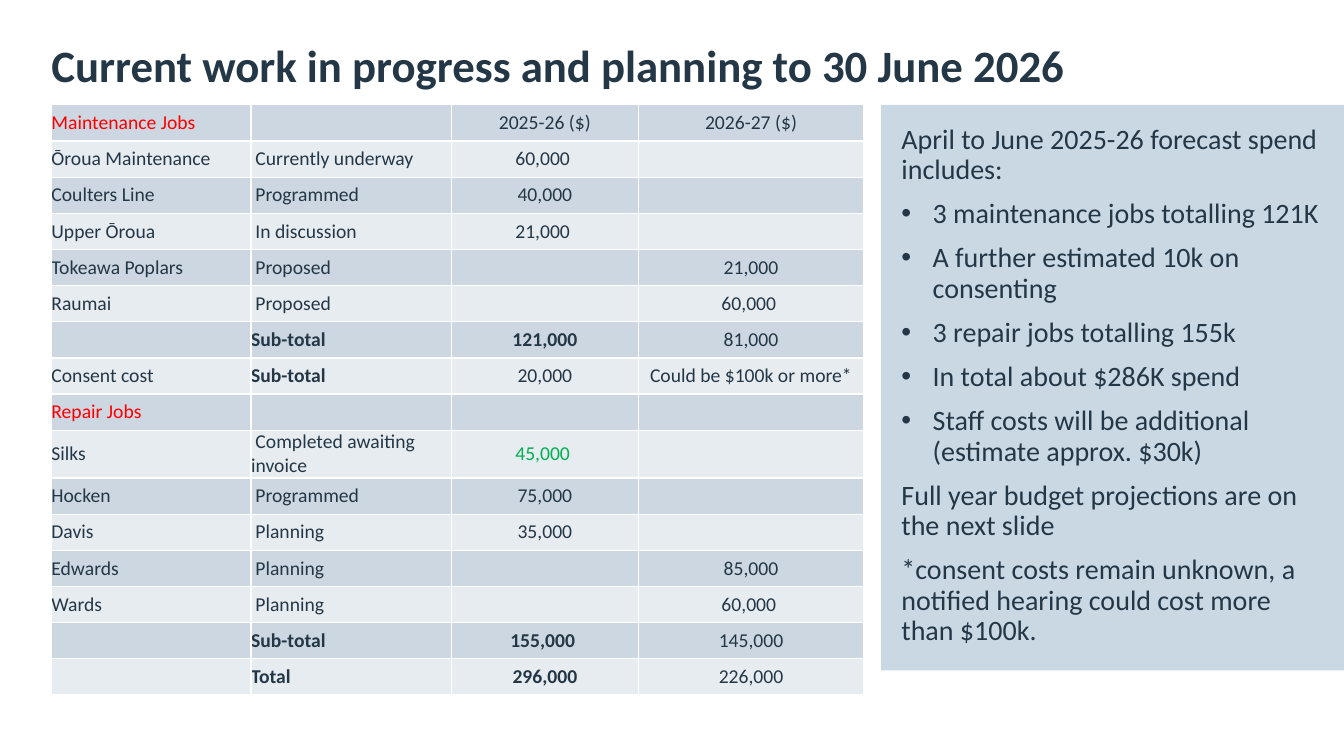
from dataclasses import dataclass

from lxml.etree import SubElement
from pptx import Presentation
from pptx.dml.color import RGBColor
from pptx.enum.shapes import MSO_SHAPE
from pptx.enum.text import MSO_ANCHOR, PP_ALIGN
from pptx.oxml import parse_xml
from pptx.oxml.ns import nsdecls, qn
from pptx.util import Inches, Pt


@dataclass(frozen=True)
class Theme:
    font: str = "Calibri"
    ink: str = "243746"
    heading: str = "FF0000"
    complete: str = "00B050"
    bands: tuple = ("CCD7E1", "E7ECF0")
    border: str = "FFFFFF"
    panel: str = "CAD8E4"
    title_size: int = 32
    panel_size: int = 20
    table_size: int = 14


THEME = Theme()

TITLE = "Current work in progress and planning to 30 June 2026"

# Job, status, 2025-26 spend, 2026-27 spend
JOBS = [
    ("Maintenance Jobs", "", "2025-26 ($)", "2026-27 ($)"),
    ("Ōroua Maintenance", " Currently underway", "60,000 ", ""),
    ("Coulters Line", " Programmed", " 40,000 ", ""),
    ("Upper Ōroua", " In discussion", "21,000 ", ""),
    ("Tokeawa Poplars", " Proposed", "", " 21,000 "),
    ("Raumai", " Proposed", "", "60,000 "),
    ("", "Sub-total", " 121,000 ", "81,000"),
    ("Consent cost", "Sub-total", "20,000", "Could be $100k or more*"),
    ("Repair Jobs", "", "", ""),
    ("Silks", " Completed awaiting invoice", "45,000 ", ""),
    ("Hocken", " Programmed", " 75,000 ", ""),
    ("Davis", " Planning", " 35,000 ", ""),
    ("Edwards", " Planning", "", " 85,000 "),
    ("Wards", " Planning", "", "60,000 "),
    ("", "Sub-total", "155,000 ", "145,000"),
    ("", "Total", "296,000", "226,000"),
]
COLUMN_WIDTHS = (1.98, 1.99, 1.85, 2.24)
TABLE_HEIGHT = 5.85
TALL_ROW, TALL_HEIGHT = 9, 0.47

# Text, bulleted
NOTES = [
    ("April to June 2025-26 forecast spend includes:", False),
    ("3 maintenance jobs totalling 121K", True),
    ("A further estimated 10k on consenting", True),
    ("3 repair jobs totalling 155k", True),
    ("In total about $286K spend", True),
    ("Staff costs will be additional (estimate approx. $30k)", True),
    ("Full year budget projections are on the next slide", False),
    ("*consent costs remain unknown, a notified hearing could cost more than $100k.", False),
]


def set_format(target, values):
    for name, value in values.items():
        setattr(target, name, value)


def set_margins(target, inches):
    sides = ("left", "top", "right", "bottom")
    set_format(target, {f"margin_{side}": Inches(inches) for side in sides})


def write(paragraph, text, size, color=THEME.ink, bold=False, **layout):
    set_format(paragraph, layout)
    run = paragraph.add_run()
    run.text = text
    set_format(run.font, {"name": THEME.font, "size": Pt(size), "bold": bold})
    run.font.color.rgb = RGBColor.from_string(color)


def add_bullet(paragraph):
    properties = paragraph._p.get_or_add_pPr()
    indent = Inches(0.31)
    properties.set("marL", str(indent))
    properties.set("indent", str(-indent))
    SubElement(properties, qn("a:buFont"), typeface="Arial")
    SubElement(properties, qn("a:buChar"), char="•")


def add_title(slide):
    title = slide.shapes.title
    set_format(title, {"left": Inches(0.51), "top": Inches(0.43),
                       "width": Inches(12.2), "height": Inches(0.48)})
    frame = title.text_frame
    set_margins(frame, 0)
    set_format(frame, {"vertical_anchor": MSO_ANCHOR.MIDDLE, "word_wrap": True})
    write(frame.paragraphs[0], TITLE, THEME.title_size, bold=True,
          alignment=PP_ALIGN.LEFT, line_spacing=0.9)


def add_borders(cell):
    properties = cell._tc.get_or_add_tcPr()
    for position, side in enumerate(("lnL", "lnR", "lnT", "lnB")):
        properties.insert(position, parse_xml(
            f'<a:{side} {nsdecls("a")} w="{Pt(1)}"><a:solidFill>'
            f'<a:srgbClr val="{THEME.border}"/></a:solidFill></a:{side}>'))


def cell_style(job, column):
    """Red section headings, green completed spend, bold totals."""
    label, status = job[:2]
    color = THEME.ink
    if column == 0 and not status:
        color = THEME.heading
    elif column == 2 and "Completed" in status:
        color = THEME.complete
    is_total = status.endswith("otal")
    bold = is_total and (column == 1 or (column == 2 and not label))
    return {"color": color, "bold": bold}


def add_jobs_table(slide):
    frame = slide.shapes.add_table(
        len(JOBS), len(COLUMN_WIDTHS), Inches(0.51), Inches(1.04),
        Inches(sum(COLUMN_WIDTHS)), Inches(TABLE_HEIGHT))
    table = frame.table
    set_format(table, {"first_row": False, "horz_banding": False})
    for column, width in zip(table.columns, COLUMN_WIDTHS):
        column.width = Inches(width)
    row_height = (TABLE_HEIGHT - TALL_HEIGHT) / (len(JOBS) - 1)
    for row, job in enumerate(JOBS):
        table.rows[row].height = Inches(TALL_HEIGHT if row == TALL_ROW else row_height)
        for column, text in enumerate(job):
            cell = table.cell(row, column)
            set_margins(cell, 0)
            cell.vertical_anchor = MSO_ANCHOR.MIDDLE
            cell.fill.solid()
            cell.fill.fore_color.rgb = RGBColor.from_string(THEME.bands[row % 2])
            add_borders(cell)
            if text:
                write(cell.text_frame.paragraphs[0], text, THEME.table_size,
                      alignment=PP_ALIGN.CENTER if column > 1 else PP_ALIGN.LEFT,
                      **cell_style(job, column))


def add_notes_panel(slide):
    panel = slide.shapes.add_shape(MSO_SHAPE.RECTANGLE, Inches(8.74), Inches(1.04),
                                   Inches(4.59), Inches(5.61))
    panel.shadow.inherit = False
    panel.fill.solid()
    panel.fill.fore_color.rgb = RGBColor.from_string(THEME.panel)
    panel.line.fill.background()
    frame = panel.text_frame
    set_margins(frame, 0.2)
    set_format(frame, {"word_wrap": True, "vertical_anchor": MSO_ANCHOR.TOP})
    for index, (text, bulleted) in enumerate(NOTES):
        paragraph = frame.add_paragraph() if index else frame.paragraphs[0]
        if bulleted:
            add_bullet(paragraph)
        write(paragraph, text, THEME.panel_size, alignment=PP_ALIGN.LEFT,
              line_spacing=0.9, space_before=Pt(10 if index else 0))


def main():
    presentation = Presentation()
    presentation.slide_width = Inches(13.33)
    presentation.slide_height = Inches(7.5)
    title_only = presentation.slide_layouts[5]
    slide = presentation.slides.add_slide(title_only)
    add_title(slide)
    add_jobs_table(slide)
    add_notes_panel(slide)
    presentation.save("out.pptx")


if __name__ == "__main__":
    main()
